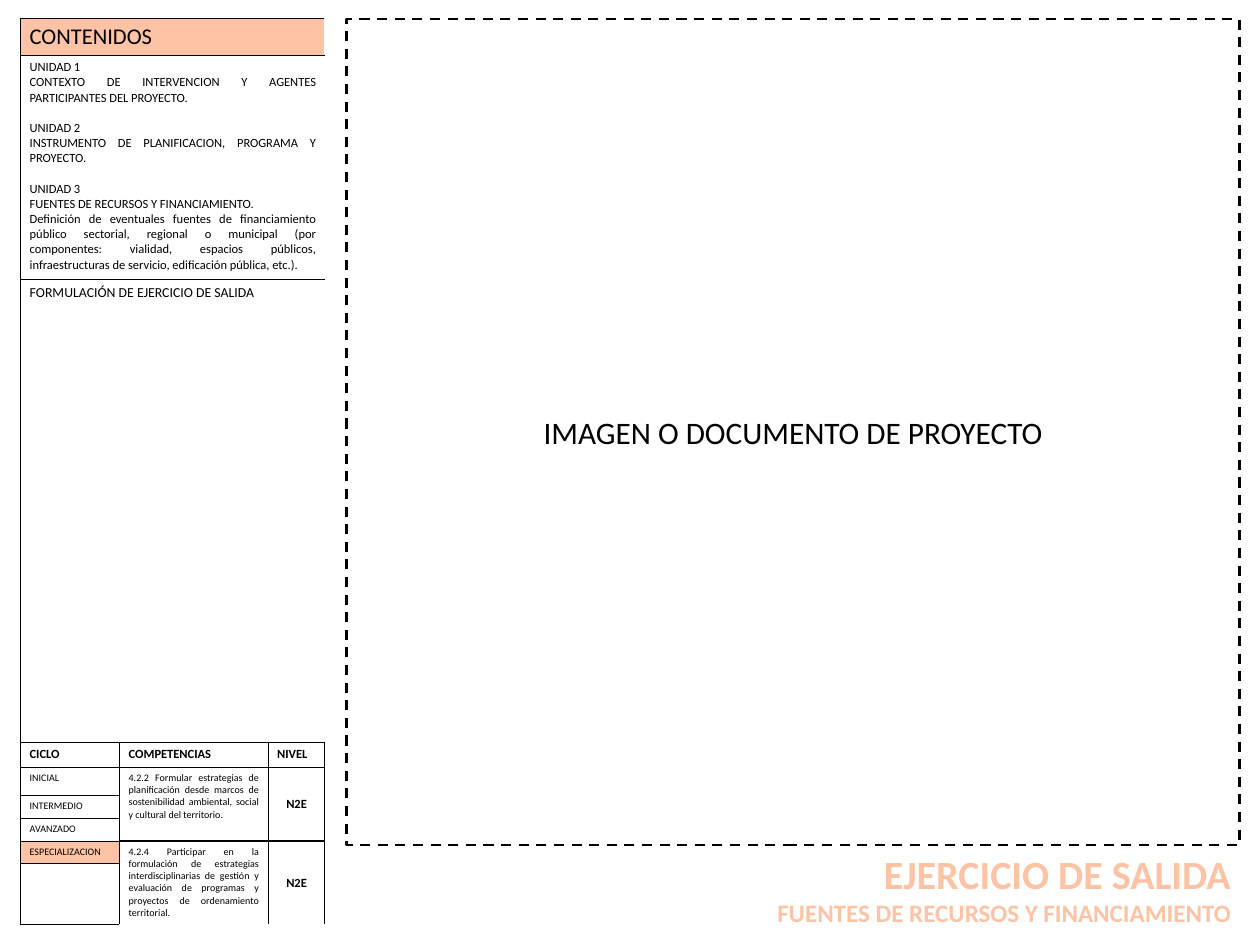
from dataclasses import dataclass

from lxml.etree import SubElement
from pptx import Presentation
from pptx.dml.color import RGBColor
from pptx.enum.dml import MSO_LINE
from pptx.enum.shapes import MSO_SHAPE
from pptx.enum.text import MSO_ANCHOR, MSO_AUTO_SIZE, PP_ALIGN
from pptx.oxml.ns import qn
from pptx.util import Inches, Pt

BLACK = RGBColor(0x00, 0x00, 0x00)
PEACH = RGBColor(0xFD, 0xC3, 0xA4)
FONT = "Calibri"

COLS = [1.1, 1.65, 0.63]
ROWS = [0.39, 2.49, 5.14, 0.28, 0.31, 0.26, 0.25, 0.25, 0.68]


@dataclass
class Entry:
    row: int
    col: int
    text: str
    size: float
    rows: int = 1
    cols: int = 1
    bold: bool = False
    centered: bool = False
    filled: bool = False


UNITS = "\n".join([
    "UNIDAD 1",
    "CONTEXTO DE INTERVENCION Y AGENTES PARTICIPANTES DEL PROYECTO.",
    "UNIDAD 2",
    "INSTRUMENTO DE PLANIFICACION, PROGRAMA Y PROYECTO.",
    "UNIDAD 3",
    "FUENTES DE RECURSOS Y FINANCIAMIENTO.",
    "Definición de eventuales fuentes de financiamiento público sectorial, "
    "regional o municipal (por componentes: vialidad, espacios públicos, "
    "infraestructuras de servicio, edificación pública, etc.).",
])

ENTRIES = [
    Entry(0, 0, "CONTENIDOS", 18, cols=3, filled=True),
    Entry(1, 0, UNITS, 10, cols=3),
    Entry(2, 0, "FORMULACIÓN DE EJERCICIO DE SALIDA", 11, cols=3),
    Entry(3, 0, "CICLO", 10, bold=True),
    Entry(3, 1, "COMPETENCIAS", 10, bold=True),
    Entry(3, 2, "NIVEL", 10, bold=True),
    Entry(4, 0, "INICIAL", 8),
    Entry(5, 0, "INTERMEDIO", 8),
    Entry(6, 0, "AVANZADO", 8),
    Entry(7, 0, "ESPECIALIZACION", 8, filled=True),
    Entry(8, 0, "", 8),
    Entry(4, 1, "4.2.2 Formular estrategias de planificación desde marcos de "
          "sostenibilidad ambiental, social y cultural del territorio.", 8, rows=3),
    Entry(4, 2, "N2E", 10, rows=3, bold=True, centered=True),
    Entry(7, 1, "4.2.4 Participar en la formulación de estrategias "
          "interdisciplinarias de gestión y evaluación de programas y proyectos "
          "de ordenamiento territorial.", 8, rows=2),
    Entry(7, 2, "N2E", 10, rows=2, bold=True, centered=True),
]


def format_paragraph(p, size: float, color: RGBColor, align, bold: bool = False) -> None:
    p.alignment = align
    for r in p.runs:
        r.font.name = FONT
        r.font.size = Pt(size)
        r.font.bold = bold
        r.font.color.rgb = color


def add_border(cell, side: str, width: float) -> None:
    ln = SubElement(cell._tc.get_or_add_tcPr(), qn(f"a:ln{side}"), w=str(Pt(width)))
    SubElement(SubElement(ln, qn("a:solidFill")), qn("a:srgbClr"), val=str(BLACK))


def rule_width(row: int, col: int) -> float:
    """Width of the rule below a row."""
    return 0.5 if row == 1 or (col == 0 and row >= 4) else 1


def fill_entry(table, e: Entry) -> None:
    # Outer borders only, also on the cells hidden by a merge
    last_row, last_col = e.row + e.rows - 1, e.col + e.cols - 1
    for i in range(e.row, last_row + 1):
        for j in range(e.col, last_col + 1):
            cell = table.cell(i, j)
            if j == e.col:
                add_border(cell, "L", 1)
            if j == last_col:
                add_border(cell, "R", 1)
            if i == e.row:
                add_border(cell, "T", rule_width(i - 1, j))
            if i == last_row:
                add_border(cell, "B", rule_width(i, j))
            if e.filled:
                cell.fill.solid()
                cell.fill.fore_color.rgb = PEACH
            else:
                cell.fill.background()

    cell = table.cell(e.row, e.col)
    if e.rows * e.cols > 1:
        cell.merge(table.cell(last_row, last_col))
    cell.text_frame.text = e.text
    cell.vertical_anchor = MSO_ANCHOR.MIDDLE if e.centered else MSO_ANCHOR.TOP
    align = PP_ALIGN.CENTER if e.centered else PP_ALIGN.JUSTIFY
    for n, p in enumerate(cell.text_frame.paragraphs):
        format_paragraph(p, e.size, BLACK, align, e.bold)
        if n and p.text.startswith("UNIDAD"):
            p.space_before = Pt(12.2)


def add_heading(slide) -> None:
    title = slide.shapes.title
    title.left, title.top = Inches(7), Inches(9.39)
    title.width, title.height = Inches(6.78), Inches(0.98)
    tf = title.text_frame
    tf.text = "EJERCICIO DE SALIDA\nFUENTES DE RECURSOS Y FINANCIAMIENTO"
    tf.auto_size = MSO_AUTO_SIZE.NONE
    tf.vertical_anchor = MSO_ANCHOR.TOP
    for p, size in zip(tf.paragraphs, (32, 20)):
        format_paragraph(p, size, PEACH, PP_ALIGN.RIGHT, bold=True)


def add_project_frame(slide) -> None:
    sp = slide.shapes.add_shape(MSO_SHAPE.RECTANGLE, Inches(3.85), Inches(0.21),
                                Inches(9.92), Inches(9.18))
    sp.shadow.inherit = False
    sp.fill.background()
    sp.line.color.rgb = BLACK
    sp.line.width = Pt(2)
    sp.line.dash_style = MSO_LINE.DASH
    tf = sp.text_frame
    tf.text = "IMAGEN O DOCUMENTO DE PROYECTO"
    tf.vertical_anchor = MSO_ANCHOR.MIDDLE
    format_paragraph(tf.paragraphs[0], 25, BLACK, PP_ALIGN.CENTER)


def add_contents_table(slide) -> None:
    table = slide.shapes.add_table(len(ROWS), len(COLS), Inches(0.23), Inches(0.21),
                                   Inches(sum(COLS)), Inches(sum(ROWS))).table
    table.first_row = table.horz_banding = False
    for column, width in zip(table.columns, COLS):
        column.width = Inches(width)
    for row, height in zip(table.rows, ROWS):
        row.height = Inches(height)
    for e in ENTRIES:
        fill_entry(table, e)


def main() -> None:
    prs = Presentation()
    prs.slide_width, prs.slide_height = Inches(14), Inches(10.5)
    slide = prs.slides.add_slide(prs.slide_layouts[5])  # Title Only
    add_heading(slide)
    add_project_frame(slide)
    add_contents_table(slide)
    prs.save("out.pptx")


if __name__ == "__main__":
    main()
